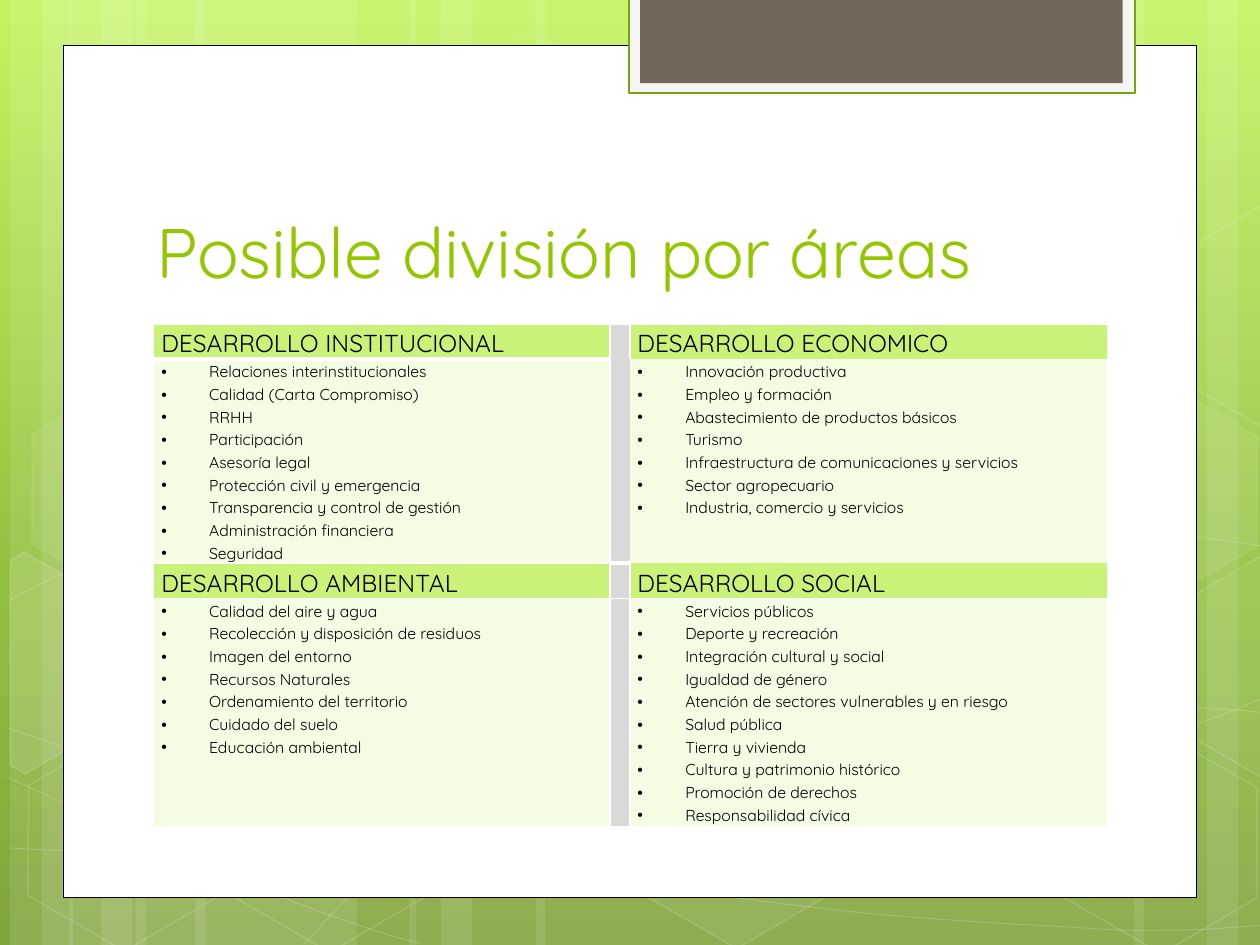
from math import cos, radians, sin

from lxml import etree
from pptx import Presentation
from pptx.dml.color import RGBColor
from pptx.enum.shapes import MSO_SHAPE
from pptx.enum.text import MSO_ANCHOR, MSO_AUTO_SIZE, PP_ALIGN
from pptx.oxml.ns import qn
from pptx.util import Inches, Pt

RECT, HEXAGON = MSO_SHAPE.RECTANGLE, MSO_SHAPE.HEXAGON
BOTTOM, NO_FIT, LEFT = MSO_ANCHOR.BOTTOM, MSO_AUTO_SIZE.NONE, PP_ALIGN.LEFT
WHITE = RGBColor(0xFF, 0xFF, 0xFF)
BLACK = RGBColor(0, 0, 0)
LIME = RGBColor(0x94, 0xC6, 0x00)
EDGE_GREEN = RGBColor(0x74, 0xA5, 0x10)
OFF_WHITE = RGBColor(0xF5, 0xF5, 0xF5)
BROWN = RGBColor(0x71, 0x68, 0x5A)
HEAD_GREEN = RGBColor(0xCA, 0xF2, 0x78)
PALE_GREEN = RGBColor(0xF4, 0xFC, 0xE4)
GREY = RGBColor(0xD9, 0xD9, 0xD9)
BACKDROP = [(0, "C3F35F"), (62, "93BF3F"), (100, "81A53E")]
FONT = "Quicksand"
TILT = 30

# Vertical light bands: left, width
BANDS = [(1.08, 1.75), (0.08, 0.5), (0.33, 0.83), (1.55, 1.75), (0.55, 0.5), (0.8, 0.83),
         (7.33, 1.75), (9.58, 0.5), (9, 0.83), (4.25, 3.08), (3.25, 0.5), (3.5, 0.83)]

# Thin curves: start point, then two control points and an end point per piece
CURVES = [
    [(0.07, 6.73), (0.61, 6.76), (1.15, 6.79), (1.9, 6.78), (2.65, 6.77), (3.58, 6.75),
     (4.58, 6.65), (5.58, 6.55), (7, 6.36), (7.92, 6.17), (8.83, 5.98), (9.77, 5.68),
     (10.07, 5.51)],
    [(0.07, 4.77), (0.36, 4.61), (0.65, 4.46), (1.21, 4.31), (1.78, 4.16), (2.59, 3.94),
     (3.47, 3.87), (4.36, 3.8), (5.44, 3.79), (6.54, 3.87), (7.64, 3.95), (9.47, 4.26),
     (10.07, 4.34)],
    [(0.06, 6.17), (1.27, 6.72), (2.47, 7.27), (3.34, 7.49)],
    [(0.07, 5.78), (0.38, 5.89), (0.7, 6), (1.28, 6.16), (1.86, 6.31), (2.73, 6.56),
     (3.57, 6.73), (4.4, 6.9), (5.45, 7.08), (6.28, 7.18), (7.11, 7.29), (8, 7.33),
     (8.53, 7.36), (9.05, 7.4), (9.19, 7.38), (9.45, 7.38), (9.71, 7.37), (9.89, 7.35),
     (10.07, 7.34)],
    [(2.42, 7.49), (2.6, 7.29), (2.78, 7.09), (3.02, 6.91), (3.26, 6.73), (3.6, 6.53),
     (3.88, 6.39), (4.16, 6.25), (4.33, 6.19), (4.7, 6.09), (5.06, 5.99), (5.73, 5.85),
     (6.08, 5.78), (6.44, 5.71), (6.49, 5.71), (6.8, 5.69), (7.11, 5.66), (7.6, 5.63),
     (7.94, 5.62), (8.29, 5.61), (8.86, 5.62), (8.86, 5.62), (9.08, 5.62), (9.31, 5.62),
     (9.53, 5.62), (9.71, 5.63), (9.88, 5.64), (9.97, 5.65), (10.06, 5.66), (10.03, 5.65),
     (10.06, 5.66)],
]

# Hexagons: left, top, fill opacity, line opacity
HEXAGONS = [(3.34, 0.36, 4, 8), (4.97, 5.89, 6, 12), (0.11, 5.91, 0, 12), (0.14, 3.12, 7, 8),
            (1.74, 5.92, 0, 12), (7.53, 4.53, 10, 12), (8.34, 5.93, 0, 12), (8.34, 3.14, 7, 8)]

# Hexagons cut by the slide edge: fill opacity, centre, corners
CUT_HEXAGONS = [
    (10, (0.36, 5.35),
     [(0.08, 4.45), (0.19, 4.38), (0.96, 4.82), (0.95, 5.7), (0.2, 6.14), (0.08, 6.07)]),
    (4, (9.85, 5.2),
     [(9.26, 4.85), (10.01, 4.41), (10.09, 4.46), (10.09, 6.13), (10.02, 6.17), (9.26, 5.73)]),
    (0, (9.85, 2.41),
     [(9.26, 2.07), (10.01, 1.63), (10.1, 1.68), (10.09, 3.35), (10.02, 3.39), (9.26, 2.95)]),
]

# Areas, row by row: heading, topics
AREAS = [
    ("DESARROLLO INSTITUCIONAL",
     ["Relaciones interinstitucionales", "Calidad (Carta Compromiso)", "RRHH", "Participación",
      "Asesoría legal", "Protección civil y emergencia", "Transparencia y control de gestión",
      "Administración financiera", "Seguridad"]),
    ("DESARROLLO ECONOMICO",
     ["Innovación productiva", "Empleo y formación", "Abastecimiento de productos básicos",
      "Turismo", "Infraestructura de comunicaciones y servicios", "Sector agropecuario",
      "Industria, comercio y servicios"]),
    ("DESARROLLO AMBIENTAL",
     ["Calidad del aire y agua", "Recolección y disposición de residuos", "Imagen del entorno",
      "Recursos Naturales", "Ordenamiento del territorio", "Cuidado del suelo",
      "Educación ambiental"]),
    ("DESARROLLO SOCIAL",
     ["Servicios públicos", "Deporte y recreación", "Integración cultural y social",
      "Igualdad de género", "Atención de sectores vulnerables y en riesgo", "Salud pública",
      "Tierra y vivienda", "Cultura y patrimonio histórico", "Promoción de derechos",
      "Responsabilidad cívica"]),
]
COLS = [3.62, 0.15, 3.79]
ROWS = [0.17, 1.56, 0.27, 1.81]  # rows grow to fit their text
RIGHT_SIDES = ["LRT", "", "LRB", "LRTB"]  # bordered sides in the right column


def paint(fill, color, opacity=100):
    if not opacity:
        fill.background()
        return
    fill.solid()
    fill.fore_color.rgb = color
    if opacity < 100:
        clr = fill._xPr.find(qn("a:solidFill"))[0]
        etree.SubElement(clr, qn("a:alpha"), val=str(opacity * 1000))


def style(s, fill, opacity=100, line=None, width=1, line_opacity=100):
    s.shadow.inherit = False
    paint(s.fill, fill, opacity)
    paint(s.line.fill, line, line_opacity if line is not None else 0)
    if line is not None:
        s.line.width = Pt(width)


def add_box(slide, kind, x, y, w, h, fill, **look):
    s = slide.shapes.add_shape(kind, Inches(x), Inches(y), Inches(w), Inches(h))
    style(s, fill, **look)
    return s


def add_path(slide, points, close, **look):
    start, *rest = [(Inches(x), Inches(y)) for x, y in points]
    builder = slide.shapes.build_freeform(*start)
    builder.add_line_segments(rest, close=close)
    s = builder.convert_to_shape()
    style(s, WHITE, line=WHITE, **look)
    return s


def add_curve(slide, points):
    s = add_path(slide, points, False, opacity=0, width=0.5, line_opacity=20)
    # Join each three line segments into one Bézier piece
    segments = list(s._element.iter(qn("a:lnTo")))
    for i in range(0, len(segments), 3):
        piece = etree.Element(qn("a:cubicBezTo"))
        segments[i].addprevious(piece)
        for segment in segments[i:i + 3]:
            piece.append(segment[0])
            segment.getparent().remove(segment)


def turn_back(point, centre):
    a = radians(TILT)
    dx, dy = point[0] - centre[0], point[1] - centre[1]
    return centre[0] + dx * cos(a) + dy * sin(a), centre[1] - dx * sin(a) + dy * cos(a)


def set_background(slide):
    fill = slide.background.fill
    fill.gradient()
    fill.gradient_angle = 270
    stops = next(slide._element.iter(qn("a:gsLst")))
    for stop in list(stops):
        stops.remove(stop)
    for pos, color in BACKDROP:
        stop = etree.SubElement(stops, qn("a:gs"), pos=str(pos * 1000))
        etree.SubElement(stop, qn("a:srgbClr"), val=color)


def add_decoration(slide):
    for x, w in BANDS:
        add_box(slide, RECT, x, 0, w, 7.5, WHITE, opacity=10)
    for points in CURVES:
        add_curve(slide, points)
    for x, y, opacity, line_opacity in HEXAGONS:
        s = add_box(slide, HEXAGON, x, y, 1.75, 1.52, WHITE, opacity=opacity,
                    line=WHITE, line_opacity=line_opacity)
        s.adjustments[0] = 0.285
        s.rotation = TILT
    for opacity, centre, corners in CUT_HEXAGONS:
        s = add_path(slide, [turn_back(p, centre) for p in corners], True,
                     opacity=opacity, line_opacity=12)
        s.rotation = TILT


def add_title(slide, text):
    s = slide.shapes.title
    slide.shapes._spTree.append(s._element)  # in front of the panel
    s.left, s.top, s.width, s.height = Inches(1.14), Inches(1.12), Inches(7.68), Inches(1.25)
    tf = s.text_frame
    tf.text = text
    tf.auto_size, tf.vertical_anchor = NO_FIT, BOTTOM
    p = tf.paragraphs[0]
    p.alignment = LEFT
    f = p.runs[0].font
    f.name, f.size, f.color.rgb = FONT, Pt(40), LIME


def set_borders(cell, sides, bottom=1):
    tcPr = cell._tc.get_or_add_tcPr()
    for i, side in enumerate("LRTB"):
        width = Pt(bottom if side == "B" else 1)
        ln = etree.Element(qn("a:ln" + side), w=str(width))
        if side in sides:
            solid = etree.SubElement(ln, qn("a:solidFill"))
            etree.SubElement(solid, qn("a:srgbClr"), val=str(WHITE))
        else:
            etree.SubElement(ln, qn("a:noFill"))
        tcPr.insert(i, ln)


def fill_cell(cell, lines, size, color, bullets=False):
    cell.margin_left = cell.margin_right = Inches(0.06)
    cell.margin_top = cell.margin_bottom = 0
    paint(cell.fill, color)
    tf = cell.text_frame
    tf.text = "\n".join(lines)
    for p in tf.paragraphs:
        p.line_spacing = 1.15
        for r in p.runs:
            r.font.name, r.font.size, r.font.color.rgb = FONT, Pt(size), BLACK
        if bullets:
            pPr = p._p.get_or_add_pPr()
            pPr.set("marL", str(Inches(0.38)))
            pPr.set("indent", str(-Inches(0.38)))
            etree.SubElement(pPr, qn("a:buFont"), typeface="Arial")
            etree.SubElement(pPr, qn("a:buChar"), char="•")
        if not lines:
            p._p.get_or_add_endParaRPr().set("sz", str(size * 100))


def add_areas_table(slide):
    table = slide.shapes.add_table(len(ROWS), len(COLS), Inches(1.22), Inches(2.57),
                                   Inches(sum(COLS)), Inches(3.89)).table
    table.first_row = table.horz_banding = False
    for col, w in zip(table.columns, COLS):
        col.width = Inches(w)
    for row, h in zip(table.rows, ROWS):
        row.height = Inches(h)
    # Headings and topics
    for i, (heading, topics) in enumerate(AREAS):
        r, c = i // 2 * 2, i % 2 * 2
        fill_cell(table.cell(r, c), [heading], 14, HEAD_GREEN)
        fill_cell(table.cell(r + 1, c), topics, 9, PALE_GREEN, bullets=True)
    # Grey divider and borders
    for r, right_sides in enumerate(RIGHT_SIDES):
        fill_cell(table.cell(r, 1), [], 9, GREY)
        for c in range(len(COLS)):
            set_borders(table.cell(r, c), right_sides if c == 2 else "LRTB",
                        bottom=3 if r == 0 and c < 2 else 1)
    table.cell(0, 1).merge(table.cell(1, 1))


def main():
    prs = Presentation()
    prs.slide_width, prs.slide_height = Inches(10), Inches(7.5)
    slide = prs.slides.add_slide(prs.slide_layouts[5])
    set_background(slide)
    add_decoration(slide)
    # White panel and top tab
    add_box(slide, RECT, 0.5, 0.36, 9, 6.76, WHITE, line=BLACK, width=0.5)
    add_box(slide, RECT, 4.99, -0.02, 4.02, 0.76, OFF_WHITE, line=EDGE_GREEN, width=1.25)
    add_box(slide, RECT, 5.08, -0.02, 3.83, 0.68, BROWN)
    add_title(slide, "Posible división por áreas")
    add_areas_table(slide)
    prs.save("out.pptx")


if __name__ == "__main__":
    main()
